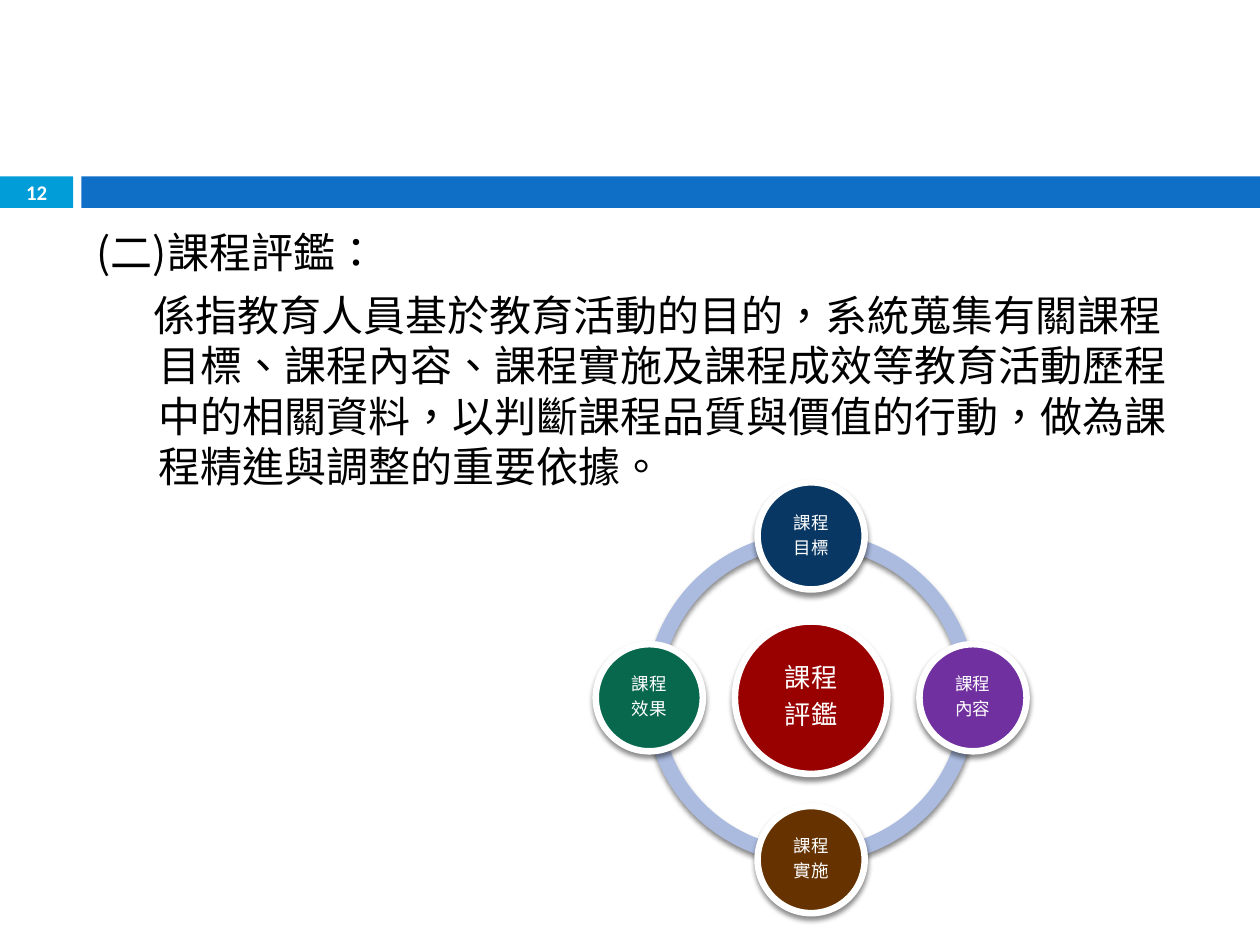
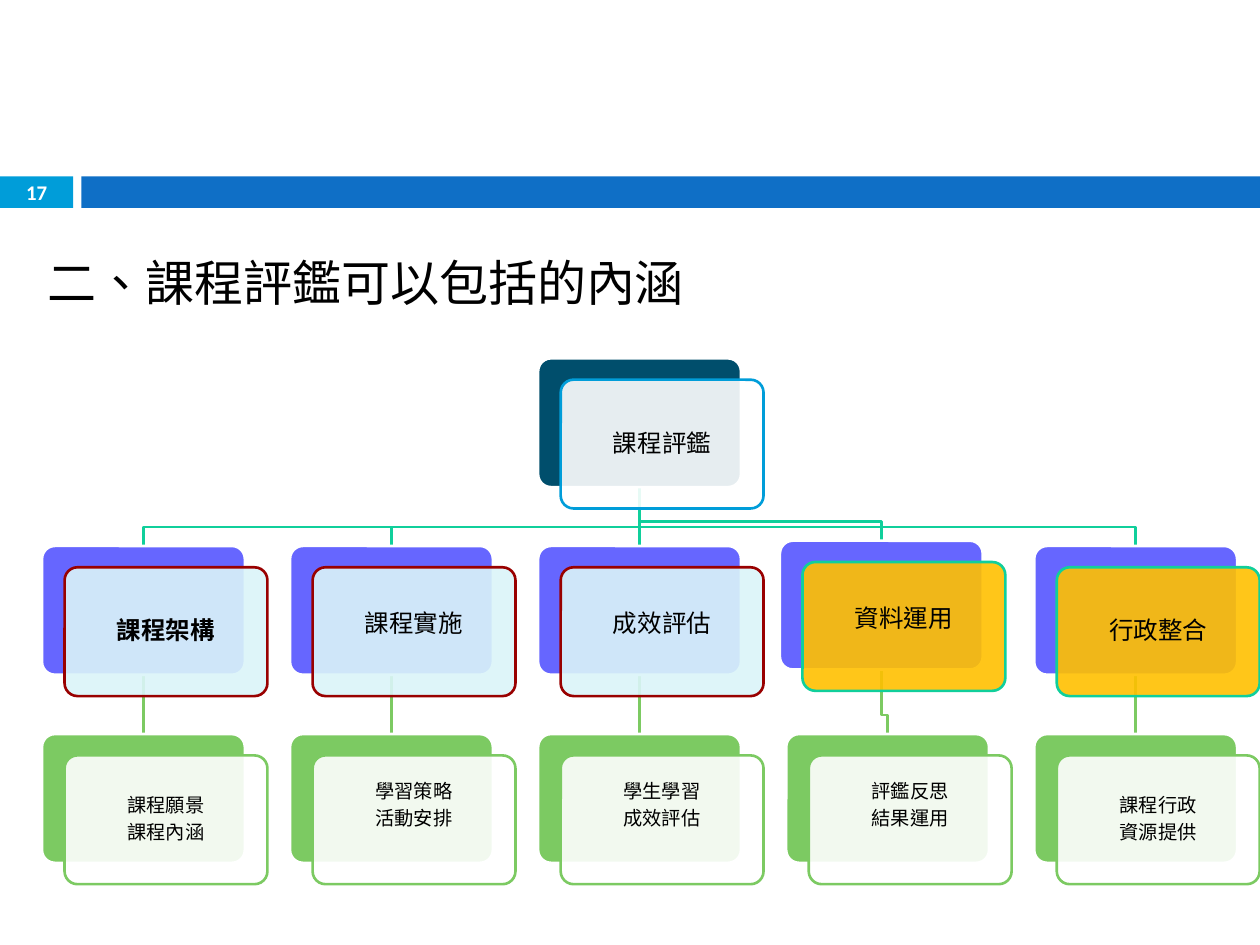
from dataclasses import dataclass
from math import cos, radians, sin

from lxml.etree import SubElement
from pptx import Presentation
from pptx.dml.color import RGBColor
from pptx.enum.shapes import MSO_CONNECTOR as Connector, MSO_SHAPE as Shape
from pptx.enum.text import MSO_ANCHOR as Anchor, PP_ALIGN as Align
from pptx.oxml.ns import qn
from pptx.util import Pt

# Content
EVALUATION = {
    "number": 12,
    "heading": "(二)課程評鑑：",
    "definition": "係指教育人員基於教育活動的目的，系統蒐集有關課程目標、課程內容、"
                  "課程實施及課程成效等教育活動歷程中的相關資料，以判斷課程品質與價值的行動，"
                  "做為課程精進與調整的重要依據。",
    "hub": ["課程", "評鑑"],
    # Clockwise from the top: lines, fill
    "aspects": [
        (["課程", "目標"], "083763"),
        (["課程", "內容"], "7030A0"),
        (["課程", "實施"], "663300"),
        (["課程", "效果"], "08684E"),
    ],
}
CONTENTS = {
    "number": 17,
    "title": "二、課程評鑑可以包括的內涵",
    "root": "課程評鑑",
    # Branch, style, bold, branch lift, leaf lines, leaf lift, (dx, dy) of the branch
    "branches": [
        ("課程架構", "core", True, 0, ["課程願景", "課程內涵"], 0, (0, 0)),
        ("課程實施", "core", False, 4, ["學習策略", "活動安排"], 8, (0, 0)),
        ("成效評估", "core", False, 4, ["學生學習", "成效評估"], 8, (0, 0)),
        ("資料運用", "support", False, 4, ["評鑑反思", "結果運用"], 8, (-3.6, -3)),
        ("行政整合", "support", False, 0, ["課程行政", "資源提供"], 0, (0, 0)),
    ],
}


@dataclass(frozen=True)
class Theme:
    latin: str = "Calibri"
    asian: str = "Noto Sans CJK TC"
    language: str = "zh-TW"
    black: str = "000000"
    white: str = "FFFFFF"
    number_band: str = "009DD9"
    title_band: str = "0F6FC6"
    ring: str = "ABBBDF"
    hub: str = "990000"
    root_link: str = "10CF9B"
    leaf_link: str = "7CCA62"
    title_size: float = 28
    body_size: float = 24
    hub_size: float = 15
    aspect_size: float = 10
    branch_size: float = 14
    leaf_size: float = 11
    number_size: float = 11.9
    line_width: float = 1.5
    space_after: float = 0.35  # share of the type size


THEME = Theme()
# Card style: back fill, front fill, front line
CARD_STYLES = {
    "root": ("004E6C", "FFFFFF", "009DD9"),
    "core": ("6666FF", "DBF5F9", "990000"),
    "support": ("6666FF", "FFC000", "10CF9B"),
    "leaf": ("7CCA62", "FFFFFF", "7CCA62"),
}

# Layout in points
SLIDE_SIZE = (720, 540)
RING_CENTER, RING_SIZE, ORBIT = (463.5, 398.7), 189.4, 92.5
HUB_SIZE, ASPECT_SIZE = 87.1, 61.2
CARD_SIZE, CARD_SHIFT = (115.9, 73.6), (12.9, 12.2)
FIRST_COLUMN, COLUMN_STEP = 24, 141.75
ROOT_TOP, BRANCH_TOP, LEAF_TOP = 204.8, 312, 419.5
TURN_GAP = 10.8


def set_values(target, values):
    for name, value in values.items():
        setattr(target, name, value)


def diagram_format(size):
    return {"alignment": Align.CENTER, "line_spacing": 0.9,
            "space_after": Pt(THEME.space_after * size)}


def write(shape, lines, size, color, bold=False, formats=None, anchor=Anchor.MIDDLE,
          insets=(0, 0, 0, 0), latin=THEME.latin):
    """Fill a shape with one paragraph per line; insets run left, top, right, bottom."""
    frame = shape.text_frame
    sides = ("margin_left", "margin_top", "margin_right", "margin_bottom")
    set_values(frame, {"word_wrap": True, "vertical_anchor": anchor,
                       **{side: Pt(inset) for side, inset in zip(sides, insets)}})
    for index, line in enumerate(lines):
        paragraph = frame.add_paragraph() if index else frame.paragraphs[0]
        set_values(paragraph, formats or {})
        run = paragraph.add_run()
        run.text = line
        set_values(run.font, {"size": Pt(size), "bold": bold, "name": latin})
        run.font.color.rgb = RGBColor.from_string(color)
        properties = run._r.get_or_add_rPr()
        properties.set("lang", THEME.language)
        SubElement(properties, qn("a:ea"), typeface=THEME.asian)
    return frame


def add_shape(slide, kind, left, top, width, height, fill, line=None, line_width=0,
              alpha=None):
    shape = slide.shapes.add_shape(kind, Pt(left), Pt(top), Pt(width), Pt(height))
    shape.shadow.inherit = False
    shape.fill.solid()
    shape.fill.fore_color.rgb = RGBColor.from_string(fill)
    if alpha:
        color = shape._element.spPr.find(".//" + qn("a:srgbClr"))
        SubElement(color, qn("a:alpha"), val=str(alpha * 1000))
    if line:
        shape.line.color.rgb = RGBColor.from_string(line)
        shape.line.width = Pt(line_width)
    else:
        shape.line.fill.background()
    return shape


def add_shadow(shape):
    effects = shape._element.spPr.find(qn("a:effectLst"))
    shadow = SubElement(effects, qn("a:outerShdw"), blurRad=str(Pt(3)),
                        dist=str(Pt(2.4)), dir="5400000", rotWithShape="0")
    color = SubElement(shadow, qn("a:srgbClr"), val=THEME.black)
    SubElement(color, qn("a:alpha"), val="45000")


def add_text_box(slide, left, top, width, height):
    return slide.shapes.add_textbox(Pt(left), Pt(top), Pt(width), Pt(height))


def new_slide(presentation, number):
    """Blank slide with the shared bands and slide number."""
    slide = presentation.slides.add_slide(presentation.slide_layouts[6])
    number_band = add_shape(slide, Shape.RECTANGLE, 0, 100.8, 41.8, 18, THEME.number_band)
    add_shape(slide, Shape.RECTANGLE, 46.5, 100.8, 673.5, 18, THEME.title_band)
    write(number_band, [str(number)], THEME.number_size, THEME.white, True,
          {"alignment": Align.CENTER})
    return slide


# Definition and ring of aspects
def add_circle(slide, center_x, center_y, size, fill, lines, text_size):
    circle = add_shape(slide, Shape.OVAL, center_x - size / 2, center_y - size / 2,
                       size, size, fill, THEME.white, 3.75)
    add_shadow(circle)
    write(circle, lines, text_size, THEME.white, insets=(1, 1, 1, 1),
          formats=diagram_format(text_size))


def build_evaluation(presentation):
    slide = new_slide(presentation, EVALUATION["number"])
    body = add_text_box(slide, 48.2, 126, 642.2, 354.2)
    frame = write(body, [EVALUATION["heading"], EVALUATION["definition"]],
                  THEME.body_size, THEME.black, anchor=Anchor.TOP,
                  formats={"space_before": Pt(7)}, insets=(7.2, 3.6, 7.2, 3.6),
                  latin=THEME.asian)
    for paragraph, indent in zip(frame.paragraphs, (-35.3, -3)):
        properties = paragraph._p.get_or_add_pPr()
        properties.set("marL", str(Pt(35.3)))
        properties.set("indent", str(Pt(indent)))

    center_x, center_y = RING_CENTER
    for quarter in range(4):
        arc = add_shape(slide, Shape.BLOCK_ARC, center_x - RING_SIZE / 2,
                        center_y - RING_SIZE / 2, RING_SIZE, RING_SIZE, THEME.ring)
        # Angles count in 60000ths of a degree, scaled by 100000
        for index, value in enumerate((quarter * 54, (quarter + 1) % 4 * 54, 0.046)):
            arc.adjustments[index] = value
        add_shadow(arc)

    add_circle(slide, center_x, center_y, HUB_SIZE, THEME.hub, EVALUATION["hub"],
               THEME.hub_size)
    for index, (lines, fill) in enumerate(EVALUATION["aspects"]):
        angle = radians(90 * index - 90)
        add_circle(slide, center_x + ORBIT * cos(angle), center_y + ORBIT * sin(angle),
                   ASPECT_SIZE, fill, lines, THEME.aspect_size)


# Tree of contents
def add_card(slide, left, top, style, lines, size, bold=False, lift=0):
    """Draw a filled card with a shifted front card; return the back one."""
    back_fill, front_fill, front_line = CARD_STYLES[style]
    shift_x, shift_y = CARD_SHIFT
    back = add_shape(slide, Shape.ROUNDED_RECTANGLE, left, top, *CARD_SIZE,
                     back_fill, THEME.white, THEME.line_width)
    front = add_shape(slide, Shape.ROUNDED_RECTANGLE, left + shift_x, top + shift_y,
                      *CARD_SIZE, front_fill, front_line, THEME.line_width, alpha=90)
    for card in (back, front):
        card.adjustments[0] = 0.1
    write(front, lines, size, THEME.black, bold, insets=(4, 4, 4, 4 + 2 * lift),
          formats=diagram_format(size))
    return back


def link_cards(slide, parent, child, color):
    """Join two cards behind everything else, with a bend where they are offset."""
    start_x, end_x = (card.left + card.width // 2 for card in (parent, child))
    start_y, end_y = parent.top + parent.height, child.top
    if start_x == end_x:
        link = slide.shapes.add_connector(Connector.STRAIGHT, start_x, start_y, end_x, end_y)
        link.begin_connect(parent, 2)
        link.end_connect(child, 0)
        SubElement(link._element.spPr, qn("a:effectLst"))
    else:
        turn_y = end_y - Pt(TURN_GAP)
        builder = slide.shapes.build_freeform(start_x, start_y)
        builder.add_line_segments([(start_x, turn_y), (end_x, turn_y), (end_x, end_y)],
                                  close=False)
        link = builder.convert_to_shape()
        link.fill.background()
        link.shadow.inherit = False
    link.line.color.rgb = RGBColor.from_string(color)
    link.line.width = Pt(THEME.line_width)
    slide.shapes._spTree.insert(2, link._element)


def build_contents(presentation):
    slide = new_slide(presentation, CONTENTS["number"])
    title = add_text_box(slide, 20.2, 122.4, 642.2, 77.8)
    write(title, [CONTENTS["title"]], THEME.title_size, THEME.black,
          insets=(7.2, 3.6, 7.2, 3.6))
    root = add_card(slide, FIRST_COLUMN + 2 * COLUMN_STEP, ROOT_TOP, "root",
                    [CONTENTS["root"]], THEME.branch_size)
    for column, branch_data in enumerate(CONTENTS["branches"]):
        name, style, bold, lift, leaf_lines, leaf_lift, (dx, dy) = branch_data
        left = FIRST_COLUMN + column * COLUMN_STEP
        branch = add_card(slide, left + dx, BRANCH_TOP + dy, style, [name],
                          THEME.branch_size, bold, lift)
        leaf = add_card(slide, left, LEAF_TOP, "leaf", leaf_lines, THEME.leaf_size,
                        lift=leaf_lift)
        link_cards(slide, root, branch, THEME.root_link)
        link_cards(slide, branch, leaf, THEME.leaf_link)


def main():
    presentation = Presentation()
    presentation.slide_width, presentation.slide_height = map(Pt, SLIDE_SIZE)
    build_evaluation(presentation)
    build_contents(presentation)
    presentation.save("out.pptx")


if __name__ == "__main__":
    main()
